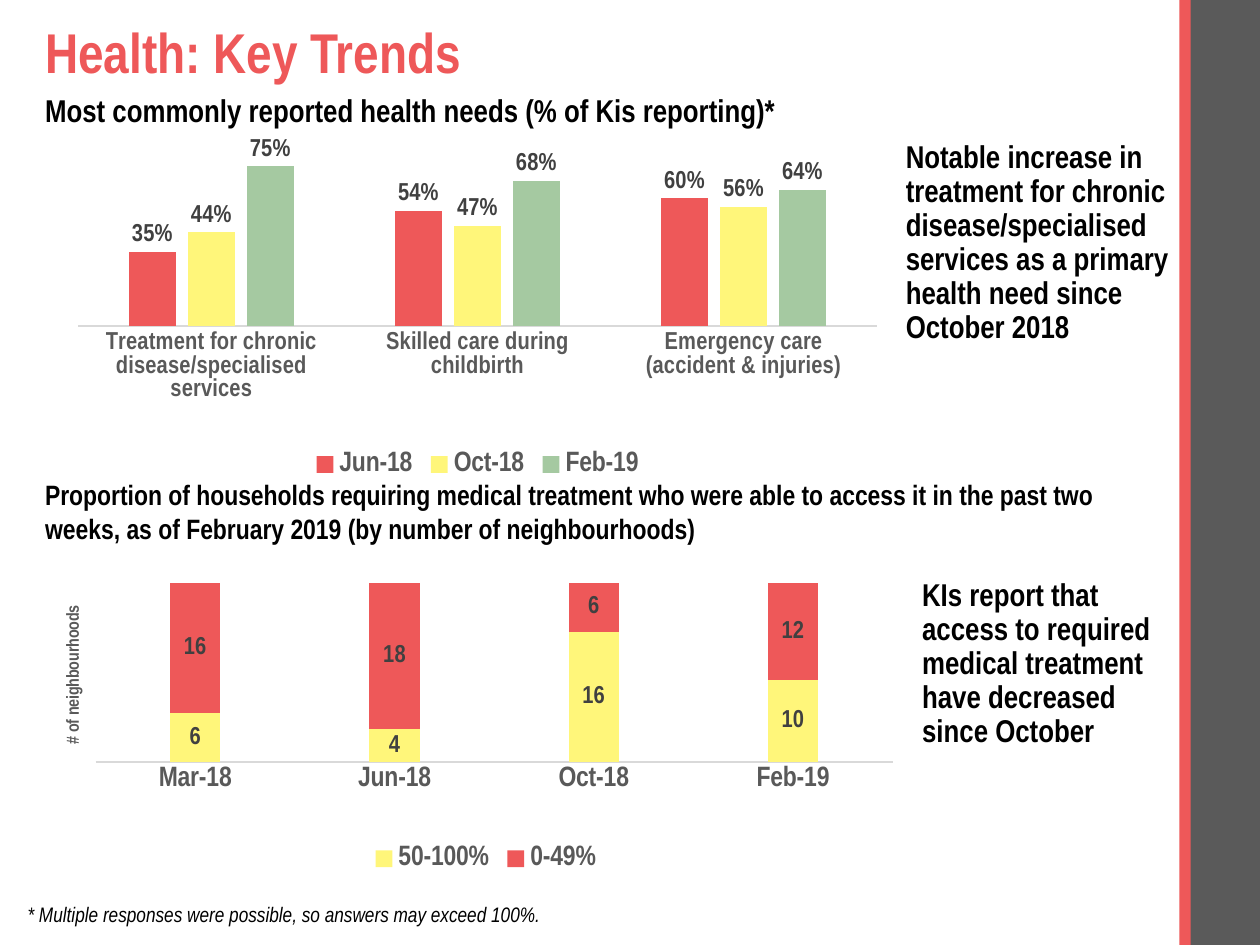
from lxml import etree
from pptx import Presentation
from pptx.chart.data import CategoryChartData
from pptx.dml.color import RGBColor
from pptx.enum.chart import XL_CHART_TYPE, XL_LABEL_POSITION, XL_LEGEND_POSITION, XL_TICK_MARK
from pptx.enum.shapes import MSO_SHAPE
from pptx.enum.text import MSO_ANCHOR
from pptx.oxml.ns import qn
from pptx.util import Inches, Pt

THEME = {
    "font": "Arial Narrow",
    "red": "EE5859", "yellow": "FFF67A", "green": "A5C9A1",
    "black": "000000", "panel": "5A5A5A", "axis": "595959",
    "label": "404040", "line": "D9D9D9",
    "title": 32, "heading": 18, "legend": 16, "labels": 14, "note": 12, "small": 10,
}

# Content: text, box (left, top, width, height), format
TEXTS = [
    ("Health: Key Trends", (0.26, 0.07, 8.69, 0.74),
     dict(size="title", color="red", spacing=0.9, anchor=MSO_ANCHOR.MIDDLE)),
    ("Most commonly reported health needs (% of Kis reporting)*",
     (0.26, 0.67, 8.94, 0.4), {}),
    ("Notable increase in treatment for chronic disease/specialised services "
     "as a primary health need since October 2018",
     (7.09, 1.07, 2.62, 1.66), dict(spacing=0.9)),
    ("* Multiple responses were possible, so answers may exceed 100%.",
     (0.12, 7.11, 8.69, 0.3), dict(size="note", bold=False, italic=True)),
    ("Proportion of households requiring medical treatment who were able to access it "
     "in the past two weeks, as of February 2019 (by number of neighbourhoods)",
     (0.26, 3.74, 8.94, 0.91), dict(size="legend")),
    ("KIs report that access to required medical treatment have decreased since October",
     (7.22, 4.55, 2.08, 1.66), dict(spacing=0.9)),
]

CHARTS = [
    dict(kind=XL_CHART_TYPE.COLUMN_CLUSTERED, box=(0.49, 1.01, 6.6, 2.82),
         plot=(0.02, 0.08, 0.96, 0.48), gap=219, overlap=-27, top=0.8,
         number_format="0%", cat_size="labels", position=XL_LABEL_POSITION.OUTSIDE_END,
         cats=["Treatment for chronic disease/specialised services",
               "Skilled care during childbirth", "Emergency care (accident & injuries)"],
         series=[("Jun-18", "red", (0.35, 0.54, 0.6)),
                 ("Oct-18", "yellow", (0.44, 0.47, 0.56)),
                 ("Feb-19", "green", (0.75, 0.68, 0.64))]),
    dict(kind=XL_CHART_TYPE.COLUMN_STACKED, box=(0.49, 4.43, 6.73, 2.53),
         plot=(0.04, 0, 0.94, 0.64), gap=297, overlap=100, top=25,
         number_format="0", cat_size="legend", position=XL_LABEL_POSITION.CENTER,
         axis_title="# of neighbourhoods",
         cats=["Mar-18", "Jun-18", "Oct-18", "Feb-19"],
         series=[("50-100%", "yellow", (6, 4, 16, 10)),
                 ("0-49%", "red", (16, 18, 6, 12))]),
]

SIDE_BARS = [("panel", 9.44, 0.56), ("red", 9.36, 0.09)]  # colour, left, width


def rgb(name):
    return RGBColor.from_string(THEME[name])


def style_font(font, size, color, bold=True, italic=False):
    font.name = THEME["font"]
    font.size = Pt(THEME[size])
    font.bold, font.italic = bold, italic
    font.color.rgb = rgb(color)


def add_text(s, text, box, size="heading", color="black", bold=True, italic=False,
             spacing=None, anchor=MSO_ANCHOR.TOP):
    tf = s.shapes.add_textbox(*map(Inches, box)).text_frame
    tf.word_wrap = True
    tf.vertical_anchor = anchor
    p = tf.paragraphs[0]
    if spacing:
        p.line_spacing = spacing
    r = p.add_run()
    r.text = text
    style_font(r.font, size, color, bold, italic)


def set_plot_layout(chart, plot):
    """Fix the inner plot area as fractions of the chart."""
    area = chart._chartSpace.chart.plotArea
    for old in area.findall(qn("c:layout")):
        area.remove(old)
    layout = etree.Element(qn("c:layout"))
    manual = etree.SubElement(layout, qn("c:manualLayout"))
    settings = [("layoutTarget", "inner"), ("xMode", "edge"), ("yMode", "edge")]
    settings += zip("xywh", plot)
    for tag, value in settings:
        etree.SubElement(manual, qn(f"c:{tag}")).set("val", str(value))
    area.insert(0, layout)


def add_column_chart(s, c):
    data = CategoryChartData(number_format=c["number_format"])
    data.categories = c["cats"]
    for name, _, values in c["series"]:
        data.add_series(name, values)
    chart = s.shapes.add_chart(c["kind"], *map(Inches, c["box"]), data).chart
    style_font(chart.font, "small", "black", bold=False)
    chart.has_title = False
    set_plot_layout(chart, c["plot"])

    # Legend
    chart.has_legend = True
    chart.legend.position = XL_LEGEND_POSITION.BOTTOM
    chart.legend.include_in_layout = False
    style_font(chart.legend.font, "legend", "axis")

    # Axes
    cat, val = chart.category_axis, chart.value_axis
    cat.major_tick_mark = cat.minor_tick_mark = XL_TICK_MARK.NONE
    cat.format.line.color.rgb = rgb("line")
    cat.format.line.width = Pt(0.75)
    style_font(cat.tick_labels.font, c["cat_size"], "axis")
    val.minimum_scale, val.maximum_scale = 0, c["top"]
    val.has_major_gridlines = False
    val.visible = False
    if "axis_title" in c:
        p = val.axis_title.text_frame.paragraphs[0]
        r = p.add_run()
        r.text = c["axis_title"]
        style_font(r.font, "small", "axis")

    # Columns and their labels
    plot = chart.plots[0]
    plot.gap_width, plot.overlap = c["gap"], c["overlap"]
    plot.vary_by_categories = False
    for series, (_, color, _) in zip(plot.series, c["series"]):
        series.format.fill.solid()
        series.format.fill.fore_color.rgb = rgb(color)
        labels = series.data_labels
        labels.show_value = True
        labels.number_format = c["number_format"]
        labels.number_format_is_linked = False
        labels.position = c["position"]
        style_font(labels.font, "labels", "label")


def main():
    prs = Presentation()
    prs.slide_width, prs.slide_height = Inches(10), Inches(7.5)
    s = prs.slides.add_slide(prs.slide_layouts[6])

    # Side bars
    for color, left, width in SIDE_BARS:
        sp = s.shapes.add_shape(MSO_SHAPE.RECTANGLE, Inches(left), 0,
                                Inches(width), prs.slide_height)
        sp.shadow.inherit = False
        sp.fill.solid()
        sp.fill.fore_color.rgb = rgb(color)
        sp.line.fill.background()

    for c in CHARTS:
        add_column_chart(s, c)
    for text, box, fmt in TEXTS:
        add_text(s, text, box, **fmt)
    prs.save("out.pptx")


if __name__ == "__main__":
    main()
